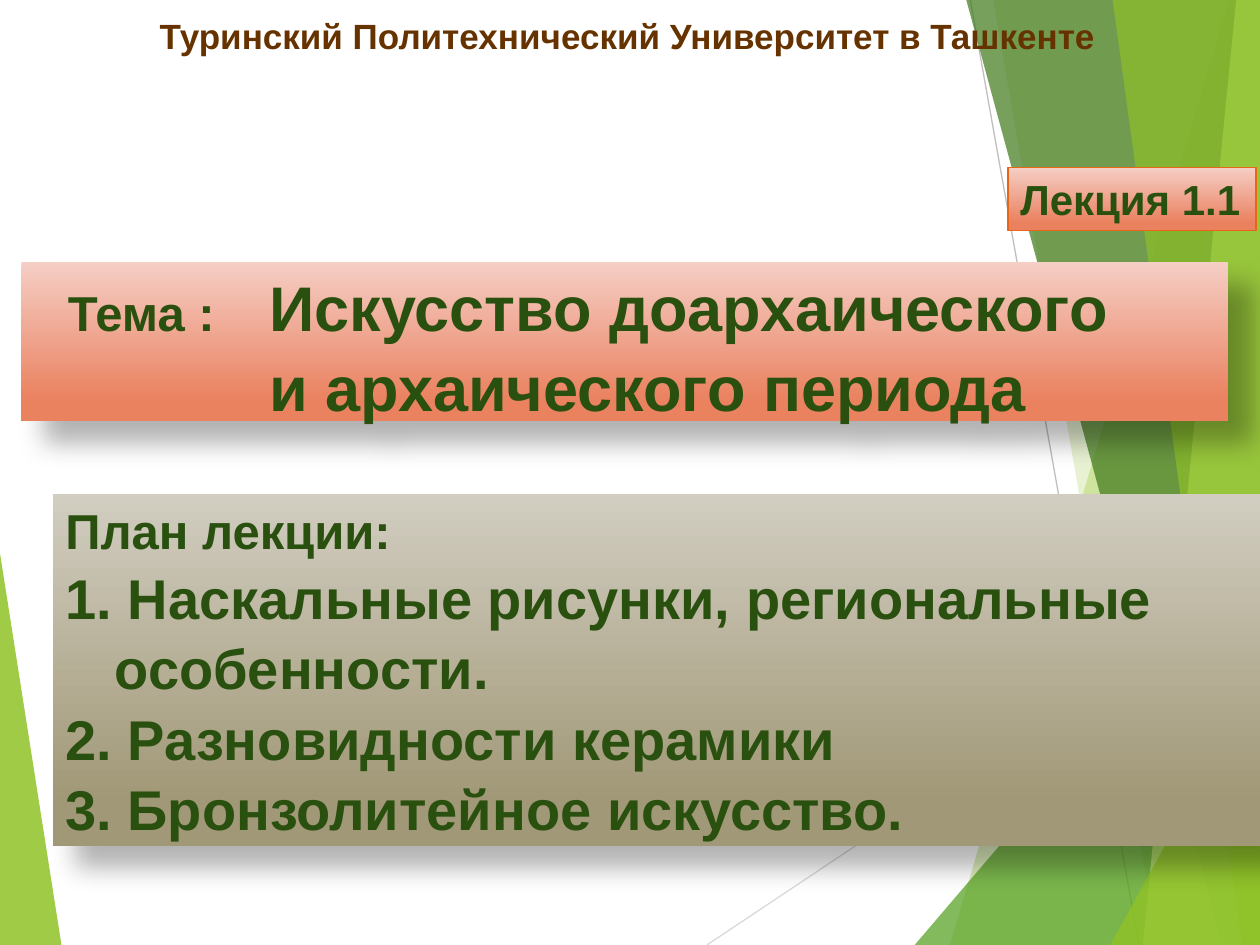
from dataclasses import dataclass

from lxml.etree import SubElement
from pptx import Presentation
from pptx.dml.color import RGBColor
from pptx.enum.shapes import MSO_CONNECTOR, MSO_SHAPE
from pptx.enum.text import MSO_ANCHOR, MSO_AUTO_SIZE, PP_ALIGN
from pptx.oxml.ns import qn
from pptx.util import Cm, Pt

WIDTH, HEIGHT = 25.4, 19.05
FONT = "Arial"
DARK_GREEN, BROWN = "2A5010", "663300"
LEAF, GRASS = "90C226", "54A021"
CORAL = ("F5CEC5", "EA815F")
STONE = ("D1CDC0", "A19877")


@dataclass
class Facet:
    points: list[tuple[float, float]]
    color: str
    opacity: int


@dataclass
class Ray:
    start: tuple[float, float]
    end: tuple[float, float]
    color: str


@dataclass
class Box:
    left: float
    top: float
    width: float
    height: float


def band(top_x: float, bottom_x: float, color: str, opacity: int) -> Facet:
    """Facet from a slanted left edge to the right side of the slide."""
    points = [(top_x, 0), (bottom_x, HEIGHT), (WIDTH, HEIGHT), (WIDTH, 0)]
    return Facet(points, color, opacity)


def corner(bottom_x: float, right_y: float, color: str, opacity: int) -> Facet:
    """Triangle in the lower right corner of the slide."""
    return Facet([(bottom_x, HEIGHT), (WIDTH, right_y), (WIDTH, HEIGHT)], color, opacity)


BACKDROP = [
    Facet([(0, 11.15), (1.24, HEIGHT), (0, HEIGHT)], LEAF, 85),
    Ray((14.25, HEIGHT), (WIDTH, 11.61), "D9D9D9"),
    Ray((19.56, 0), (22.96, HEIGHT), "BFBFBF"),
    band(24.77, 19.15, LEAF, 30),
    band(20.02, 23.34, LEAF, 20),
    corner(18.44, 10.9, GRASS, 72),
    band(19.48, 24.64, "3F7819", 70),
    band(24.92, 23.04, "C0E474", 70),
    band(22.43, 25.04, LEAF, 65),
    corner(22.38, 13.59, LEAF, 80),
]
TOPIC_BOX = Box(0.43, 5.28, 24.33, 3.2)
PLAN_BOX = Box(1.07, 9.96, 24.33, 7.09)
LECTURE_BOX = Box(20.32, 3.38, 5, 1.27)
UNIVERSITY_BOX = Box(2.97, 0.15, 19.89, 1.12)
PLAN = [
    "План лекции:",
    "1. Наскальные рисунки, региональные особенности.",
    "2. Разновидности керамики",
    "3. Бронзолитейное искусство.",
]


def rgb(color: str) -> RGBColor:
    return RGBColor.from_string(color)


def lengths(box: Box) -> list[Cm]:
    return [Cm(value) for value in (box.left, box.top, box.width, box.height)]


def draw_facet(slide, facet: Facet) -> None:
    start, *others = [(Cm(x), Cm(y)) for x, y in facet.points]
    builder = slide.shapes.build_freeform(*start)
    builder.add_line_segments(others)
    shape = builder.convert_to_shape()
    shape.shadow.inherit = False
    shape.line.fill.background()
    shape.fill.solid()
    shape.fill.fore_color.rgb = rgb(facet.color)
    color_element = shape._element.spPr.find(f".//{qn('a:srgbClr')}")
    SubElement(color_element, qn("a:alpha"), val=str(facet.opacity * 1000))


def draw_ray(slide, ray: Ray) -> None:
    ends = [Cm(value) for value in (*ray.start, *ray.end)]
    connector = slide.shapes.add_connector(MSO_CONNECTOR.STRAIGHT, *ends)
    connector.line.color.rgb = rgb(ray.color)
    connector.line.width = Pt(0.75)
    SubElement(connector._element.spPr, qn("a:effectLst"))


def fill_gradient(shape, colors: tuple[str, str]) -> None:
    """Shade from top to bottom, without outline or shadow."""
    shape.shadow.inherit = False
    shape.line.fill.background()
    shape.fill.gradient()
    shape.fill.gradient_angle = 270
    for stop, color, position in zip(shape.fill.gradient_stops, colors, (0, 0.88)):
        stop.color.rgb = rgb(color)
        stop.position = position


def add_shadow(shape) -> None:
    effects = shape._element.spPr.find(qn("a:effectLst"))
    shadow = SubElement(effects, qn("a:outerShdw"), blurRad=str(Pt(15)),
                        dist=str(Pt(18)), dir=str(45 * 60000), algn="tl", rotWithShape="0")
    color_element = SubElement(shadow, qn("a:srgbClr"), val="000000")
    SubElement(color_element, qn("a:alpha"), val="30000")


def format_run(run, size: int, color: str = DARK_GREEN) -> None:
    run.font.name = FONT
    run.font.size = Pt(size)
    run.font.bold = True
    run.font.color.rgb = rgb(color)


def hang(paragraph, indent: float) -> None:
    properties = paragraph._p.get_or_add_pPr()
    properties.set("marL", str(Cm(indent)))
    properties.set("indent", str(-Cm(indent)))


def add_panel(slide, box: Box, colors: tuple[str, str]):
    shape = slide.shapes.add_shape(MSO_SHAPE.RECTANGLE, *lengths(box))
    fill_gradient(shape, colors)
    return shape


def draw_topic(slide) -> None:
    title = slide.shapes.title
    title.left, title.top, title.width, title.height = lengths(TOPIC_BOX)
    slide.shapes._spTree.append(title._element)
    fill_gradient(title, CORAL)
    add_shadow(title)
    frame = title.text_frame
    frame.auto_size = MSO_AUTO_SIZE.NONE
    frame.word_wrap = True
    frame.vertical_anchor = MSO_ANCHOR.MIDDLE
    frame.margin_left, frame.margin_top = Cm(0.94), Cm(0.13)
    frame.margin_right, frame.margin_bottom = Cm(2.21), Cm(0)
    paragraph = frame.paragraphs[0]
    paragraph.alignment = PP_ALIGN.LEFT
    paragraph.line_spacing = 1.05
    hang(paragraph, 4.06)
    for text, size in (("Тема :\t", 28), ("Искусство доархаического и архаического периода", 36)):
        run = paragraph.add_run()
        run.text = text
        format_run(run, size)


def draw_plan(slide) -> None:
    panel = add_panel(slide, PLAN_BOX, STONE)
    add_shadow(panel)
    frame = panel.text_frame
    frame.word_wrap = True
    frame.vertical_anchor = MSO_ANCHOR.MIDDLE
    frame.text = "\n".join(PLAN)
    for index, paragraph in enumerate(frame.paragraphs):
        paragraph.alignment = PP_ALIGN.LEFT
        paragraph.line_spacing = 1.05
        if index:
            hang(paragraph, 0.99)
        format_run(paragraph.runs[0], 32 if index else 28)


def draw_label(shape, text: str, size: int, color: str, anchor: MSO_ANCHOR, wrap: bool) -> None:
    frame = shape.text_frame
    frame.word_wrap = wrap
    frame.vertical_anchor = anchor
    frame.text = text
    paragraph = frame.paragraphs[0]
    paragraph.alignment = PP_ALIGN.LEFT
    format_run(paragraph.runs[0], size, color)


def main() -> None:
    presentation = Presentation()
    presentation.slide_width, presentation.slide_height = Cm(WIDTH), Cm(HEIGHT)
    slide = presentation.slides.add_slide(presentation.slide_layouts[5])
    for item in BACKDROP:
        if isinstance(item, Facet):
            draw_facet(slide, item)
        else:
            draw_ray(slide, item)
    draw_topic(slide)
    draw_plan(slide)
    lecture = add_panel(slide, LECTURE_BOX, CORAL)
    lecture.line.color.rgb = rgb("E76618")
    lecture.line.width = Pt(1)
    draw_label(lecture, "Лекция 1.1", 24, DARK_GREEN, MSO_ANCHOR.TOP, False)
    university = slide.shapes.add_textbox(*lengths(UNIVERSITY_BOX))
    draw_label(university, "Туринский Политехнический Университет в Ташкенте",
               20, BROWN, MSO_ANCHOR.MIDDLE, True)
    presentation.save("out.pptx")


if __name__ == "__main__":
    main()
